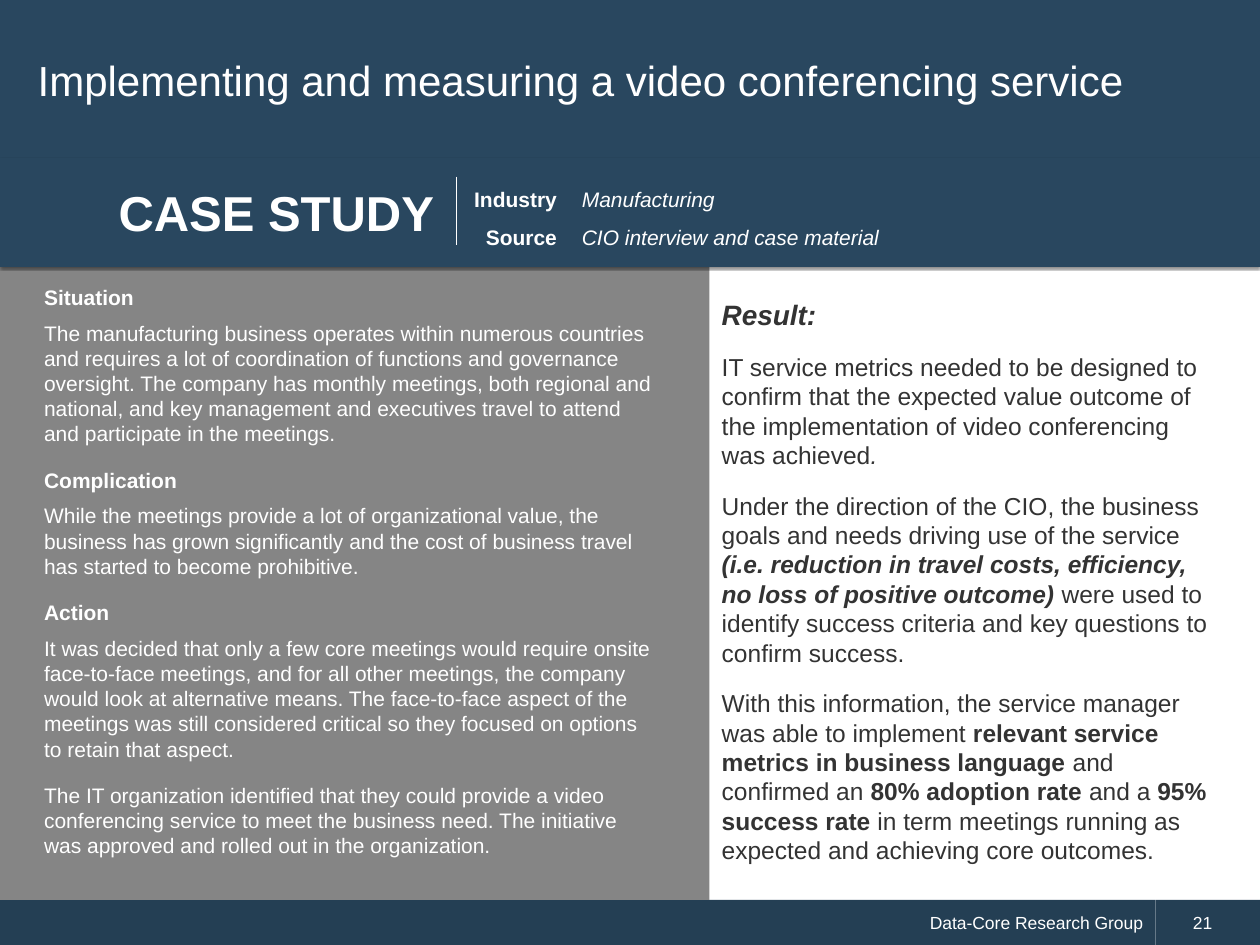
from lxml import etree
from pptx import Presentation
from pptx.dml.color import RGBColor
from pptx.enum.shapes import MSO_CONNECTOR, MSO_SHAPE
from pptx.enum.text import MSO_ANCHOR, PP_ALIGN
from pptx.oxml import parse_xml
from pptx.oxml.ns import nsdecls, qn
from pptx.util import Cm, Pt

RECT = MSO_SHAPE.RECTANGLE
LINE = MSO_CONNECTOR.STRAIGHT
TOP, MIDDLE = MSO_ANCHOR.TOP, MSO_ANCHOR.MIDDLE
LEFT, RIGHT = PP_ALIGN.LEFT, PP_ALIGN.RIGHT

FONT = "Arial"
NAVY, DARK, GREY, WHITE, INK = "29475F", "243F54", "858585", "FFFFFF", "333333"
WIDTH, HEIGHT = 25.4, 19.05
FOOT = 18.14   # top of the footer
SPLIT = 14.3   # edge between the story and the result
PAGE = 23.29   # left of the page number

TITLE = "Implementing and measuring a video conferencing service"
FACTS = [("Industry", "Manufacturing"),
         ("Source", "CIO interview and case material")]
STORY = [
    ("Situation", [
        "The manufacturing business operates within numerous countries and requires a lot of "
        "coordination of functions and governance oversight. The company has monthly meetings, "
        "both regional and national, and key management and executives travel to attend and "
        "participate in the meetings."]),
    ("Complication", [
        "While the meetings provide a lot of organizational value, the business has grown "
        "significantly and the cost of business travel has started to become prohibitive."]),
    ("Action", [
        "It was decided that only a few core meetings would require onsite face-to-face meetings, "
        "and for all other meetings, the company would look at alternative means. The "
        "face-to-face aspect of the meetings was still considered critical so they focused on "
        "options to retain that aspect.",
        "The IT organization identified that they could provide a video conferencing service to "
        "meet the business need. The initiative was approved and rolled out in the "
        "organization."]),
]
# Each run is (text, style): b for bold, i for italic
RESULT = [
    [("IT service metrics needed to be designed to confirm that the expected value outcome of "
      "the implementation of video conferencing was achieved", ""), (".", "i")],
    [("Under the direction of the CIO, the business goals and needs driving use of the service ",
      ""),
     ("(i.e. reduction in travel costs, efficiency, no loss of positive outcome) ", "bi"),
     ("were used to identify success criteria and key questions to confirm success.", "")],
    [("With this information, the service manager was able to implement ", ""),
     ("relevant service metrics in business language ", "b"),
     ("and confirmed an ", ""), ("80% adoption rate ", "b"), ("and a ", ""),
     ("95% success rate", "b"),
     (" in term meetings running as expected and achieving core outcomes.", "")],
]


def rgb(code):
    return RGBColor.from_string(code)


def frame(shape, inset=0.25, right=0.25, anchor=TOP):
    text = shape.text_frame
    text.word_wrap = True
    text.vertical_anchor = anchor
    text.margin_left, text.margin_right = Cm(inset), Cm(right)
    return text


def block(slide, x, y, w, h, color):
    shape = slide.shapes.add_shape(RECT, Cm(x), Cm(y), Cm(w), Cm(h))
    shape.shadow.inherit = False
    shape.fill.solid()
    shape.fill.fore_color.rgb = rgb(color)
    shape.line.fill.background()
    return shape


def box(slide, x, y, w, h):
    return frame(slide.shapes.add_textbox(Cm(x), Cm(y), Cm(w), Cm(h)))


def write(text, runs, size, color=WHITE, style="", align=LEFT, before=0, after=0, space=1):
    """Add a paragraph from a string or from (text, style) runs."""
    first = text.paragraphs[0]
    para = text.add_paragraph() if first.runs else first
    para.alignment, para.line_spacing = align, space
    para.space_before, para.space_after = Pt(before), Pt(after)
    font = para.font
    font.name, font.size, font.color.rgb = FONT, Pt(size), rgb(color)
    font.bold, font.italic = "b" in style, "i" in style
    if isinstance(runs, str):
        runs = [(runs, style)]
    for words, look in runs:
        run = para.add_run()
        run.text = words
        if look != style:
            run.font.bold, run.font.italic = "b" in look, "i" in look


def shade(shape):
    """Give the shape a thin soft shadow below."""
    effects = shape._element.spPr.find(qn("a:effectLst"))
    effects.append(parse_xml(
        f'<a:outerShdw {nsdecls("a")} blurRad="12700" dist="12700" dir="5400000" '
        'rotWithShape="0"><a:srgbClr val="000000"><a:alpha val="45000"/></a:srgbClr>'
        '</a:outerShdw>'))


def footer(slide):
    text = frame(block(slide, 0, FOOT, PAGE, HEIGHT - FOOT, DARK), anchor=MIDDLE)
    write(text, "Data-Core Research Group", 10, align=RIGHT)
    text = frame(block(slide, PAGE, FOOT, WIDTH - PAGE, HEIGHT - FOOT, DARK), 0.76, anchor=MIDDLE)
    write(text, "21", 10)


def header(slide):
    text = frame(block(slide, 0, -0.05, WIDTH, 3.3, NAVY), 0.76, 0.76, MIDDLE)
    write(text, TITLE, 24, after=8)


def banner(slide):
    bar = block(slide, 0, 3.18, WIDTH, 2.2, NAVY)
    shade(bar)
    write(frame(bar, 2.39, anchor=MIDDLE), "CASE STUDY", 28, style="b")
    names = frame(block(slide, 9.07, 3.38, 2.41, 1.7, NAVY))
    values = box(slide, 11.48, 3.38, 10.39, 1.8)
    for name, value in FACTS:
        write(names, name, 12, style="b", align=RIGHT, space=1.5)
        write(values, value, 12, style="i", space=1.5)
    rule = slide.shapes.add_connector(LINE, Cm(9.2), Cm(3.56), Cm(9.2), Cm(4.93))
    rule.line.color.rgb, rule.line.width = rgb(WHITE), Pt(0.75)
    etree.SubElement(rule._element.spPr, qn("a:effectLst"))


def story(slide):
    block(slide, 0, 5.23, SPLIT, FOOT - 5.23, GREY)
    text = box(slide, 0.64, 5.61, 12.93, 12.14)
    for part, (head, bodies) in enumerate(STORY):
        write(text, head, 12, style="b", before=6 if part else 0, after=6)
        for place, body in enumerate(bodies):
            write(text, body, 12, before=6 if place else 0, after=6)


def result(slide):
    text = box(slide, SPLIT, 5.87, 10.34, 11.79)
    write(text, "Result:", 16, INK, "bi", before=6, after=6)
    for runs in RESULT:
        write(text, runs, 14, INK, before=6, after=6)


def main():
    deck = Presentation()
    deck.slide_width, deck.slide_height = Cm(WIDTH), Cm(HEIGHT)
    slide = deck.slides.add_slide(deck.slide_layouts[6])
    for draw in (footer, header, story, banner, result):
        draw(slide)
    deck.save("out.pptx")


if __name__ == "__main__":
    main()
